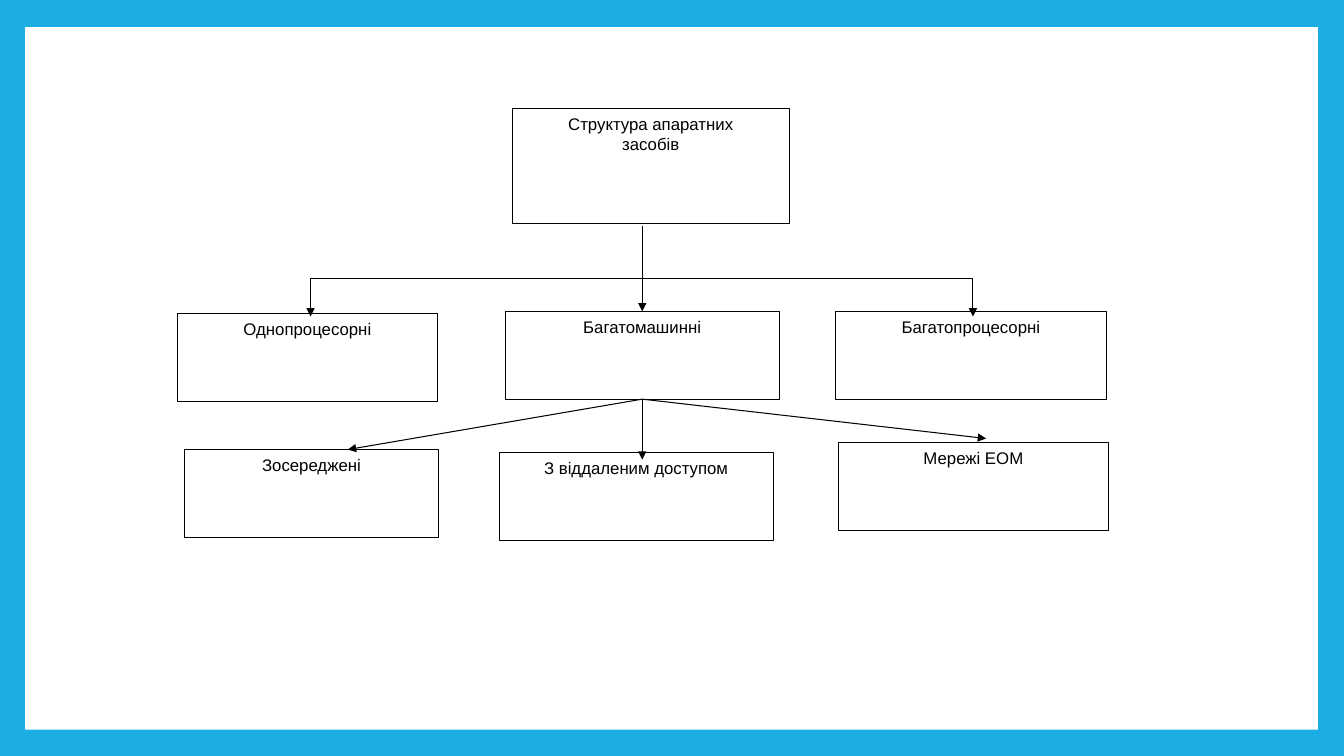
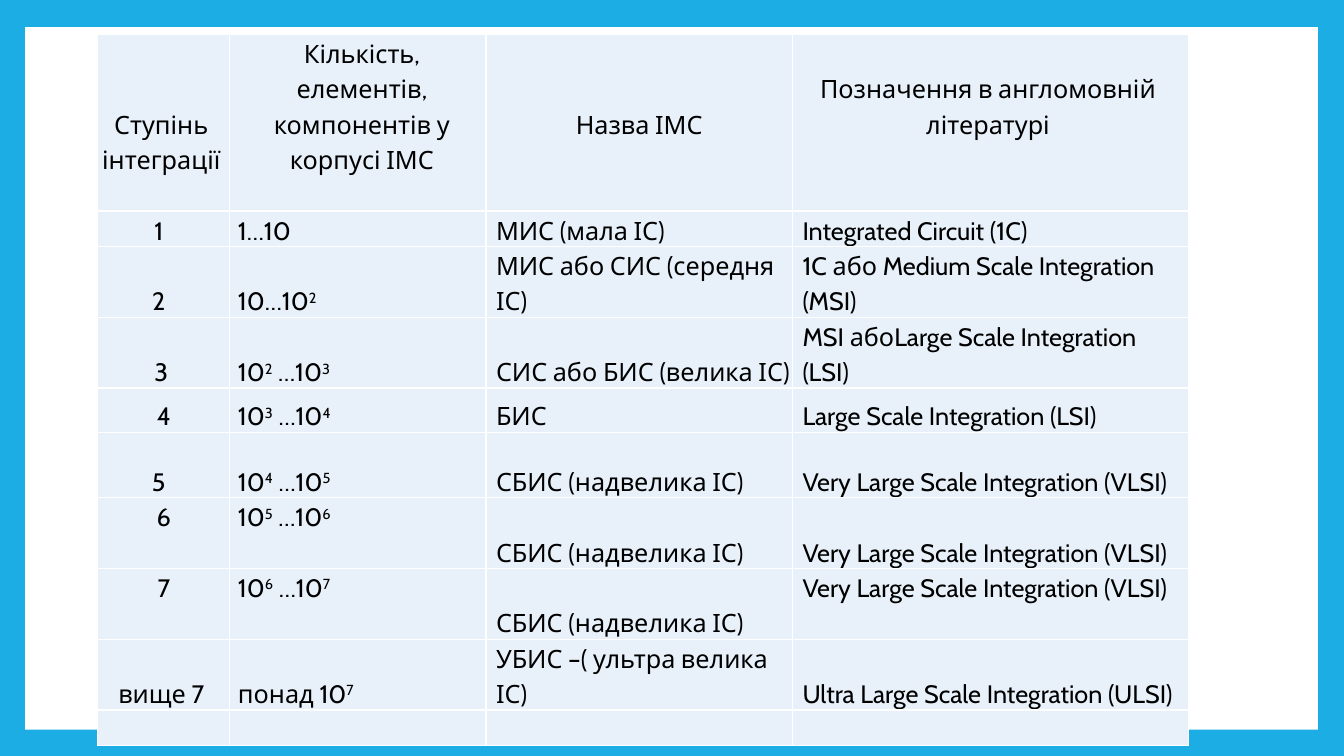
from lxml.etree import SubElement
from pptx import Presentation
from pptx.dml.color import RGBColor
from pptx.enum.shapes import MSO_CONNECTOR, MSO_SHAPE
from pptx.enum.text import MSO_ANCHOR, PP_ALIGN
from pptx.oxml.ns import qn
from pptx.util import Inches, Pt

FRAME_BLUE = RGBColor(0x1C, 0xAD, 0xE4)
CELL_BLUE = RGBColor(0xE8, 0xF1, 0xFA)
WHITE = RGBColor(0xFF, 0xFF, 0xFF)
BLACK = RGBColor(0, 0, 0)
DIAGRAM_FONT = "Arial"
TABLE_FONT = "Cabin"
TOP, BOTTOM = 0, 2

DIAGRAM_BOXES = {
    "root": ("Структура апаратних\nзасобів", 3.32, 0, 2.75, 1.14),
    "multi_machine": ("Багатомашинні", 3.25, 2.01, 2.72, 0.87),
    "single_processor": ("Однопроцесорні", 0, 2.03, 2.58, 0.87),
    "multi_processor": ("Багатопроцесорні", 6.53, 2.01, 2.68, 0.87),
    "concentrated": ("Зосереджені", 0.07, 3.38, 2.52, 0.87),
    "remote_access": ("З віддаленим доступом", 3.19, 3.41, 2.72, 0.87),
    "networks": ("Мережі ЕОМ", 6.56, 3.31, 2.67, 0.87),
}
BRANCH_HEIGHT = 1.68
BRANCH_ENDS = [1.32, 7.89]
BRANCH_DROP = 0.38

COLUMN_WIDTHS = [1.31, 2.54, 3.04, 3.93]
COLUMN_INDENTS = [0, 0.08, 0.1, 0.1]
ROW_HEIGHTS = [1.73, 0.35, 0.7, 0.7, 0.44, 0.65, 0.7, 0.7, 0.7, 0.35]
LINE_HEIGHT = 0.35
LEVEL_RIGHT_MARGINS = [0.05, 0.1, 0.1, 0.05, 0, 0.1, 0, 0, 0.05, 0]
TABLE_ROWS = [
    ["Ступінь інтеграції", "Кількість, елементів, компонентів у корпусі ІМС",
     "Назва ІМС", "Позначення в англомовній літературі"],
    ["1", "1…10", "МИС (мала ІС)", "Integrated Circuit (1C)"],
    ["2", "10…10^2", "МИС або СИС (середня ІС)",
     "1C або Medium Scale Integration (MSI)"],
    ["3", "10^2 …10^3", "СИС або БИС (велика ІС)",
     "MSI абоLarge Scale Integration (LSI)"],
    ["4", "10^3 …10^4", "БИС", "Large Scale Integration (LSI)"],
    ["5", "10^4 …10^5", "СБИС (надвелика ІС)",
     "Very Large Scale Integration (VLSI)"],
    ["6", "10^5 …10^6", "СБИС (надвелика ІС)",
     "Very Large Scale Integration (VLSI)"],
    ["7", "10^6 …10^7", "СБИС (надвелика ІС)",
     "Very Large Scale Integration (VLSI)"],
    ["вище 7", "понад 10^7", "УБИС –( ультра велика ІС)",
     "Ultra Large Scale Integration (ULSI)"],
    ["", "", "", ""],
]
LINES_BELOW = {
    (0, 0): 1, (0, 1): 1, (0, 2): 2, (0, 3): 2,
    (6, 0): 1, (6, 1): 1, (7, 0): 1, (7, 1): 1, (7, 3): 1,
}


def style_font(paragraph, name, size):
    """Give a paragraph its typeface, size and black colour."""
    paragraph.font.name = name
    paragraph.font.size = Pt(size)
    paragraph.font.color.rgb = BLACK


def add_frame(presentation, slide):
    """Give the slide master the blue background and the white panel."""
    master = presentation.slide_master
    master.background.fill.solid()
    master.background.fill.fore_color.rgb = FRAME_BLUE
    panel = slide.shapes.add_shape(
        MSO_SHAPE.RECTANGLE, Inches(0.25), Inches(0.27), Inches(12.82), Inches(6.97))
    panel.shadow.inherit = False
    panel.fill.solid()
    panel.fill.fore_color.rgb = WHITE
    panel.line.fill.background()
    next_id = max(shape.shape_id for shape in master.shapes) + 1
    panel.element.nvSpPr.cNvPr.set("id", str(next_id))
    master.element.cSld.spTree.insert(2, panel.element)


def add_box(slide, text, left, top, width, height):
    """Add an outlined process box with centred text at its top."""
    box = slide.shapes.add_shape(
        MSO_SHAPE.FLOWCHART_PROCESS, left, top, width, height)
    box.shadow.inherit = False
    box.fill.solid()
    box.fill.fore_color.rgb = WHITE
    box.line.color.rgb = BLACK
    box.line.width = Pt(0.75)
    frame = box.text_frame
    frame.word_wrap = True
    frame.vertical_anchor = MSO_ANCHOR.TOP
    frame.text = text
    for paragraph in frame.paragraphs:
        paragraph.alignment = PP_ALIGN.CENTER
        style_font(paragraph, DIAGRAM_FONT, 12)
    return box


def add_line(slide, start, end, arrow=True):
    """Add a thin black straight connector, with an arrowhead if wanted."""
    connector = slide.shapes.add_connector(MSO_CONNECTOR.STRAIGHT, *start, *end)
    connector.line.color.rgb = BLACK
    connector.line.width = Pt(0.75)
    if arrow:
        SubElement(connector.line._get_or_add_ln(), qn("a:tailEnd"), type="triangle")
    SubElement(connector.element.spPr, qn("a:effectLst"))
    return connector


def add_hierarchy(slide, left, top):
    """Draw the hardware structure diagram from its upper left corner."""
    boxes = {}
    for name, (text, x, y, width, height) in DIAGRAM_BOXES.items():
        boxes[name] = add_box(slide, text, left + Inches(x), top + Inches(y),
                              Inches(width), Inches(height))

    hub = boxes["multi_machine"]
    trunk = hub.left + hub.width // 2
    branch = top + Inches(BRANCH_HEIGHT)
    branch_ends = [left + Inches(x) for x in BRANCH_ENDS]
    add_line(slide, (branch_ends[0], branch), (branch_ends[1], branch), arrow=False)
    for x in branch_ends:
        add_line(slide, (x, branch), (x, branch + Inches(BRANCH_DROP)))
    stem = add_line(slide, (trunk, top + Inches(1.16)), (trunk, hub.top))
    stem.end_connect(hub, TOP)

    ends = [
        (left + Inches(1.69), boxes["concentrated"].top),
        (trunk, boxes["remote_access"].top + Inches(0.07)),
        (left + Inches(8.02), boxes["networks"].top - Inches(0.04)),
    ]
    for end in ends:
        connector = add_line(slide, (trunk, hub.top + hub.height), end)
        connector.begin_connect(hub, BOTTOM)


def add_powers(paragraph, text):
    """Write text whose digits after a caret are raised."""
    first, *rest = text.split("^")
    paragraph.add_run().text = first
    for piece in rest:
        exponent = paragraph.add_run()
        exponent.text = piece[0]
        exponent.font._element.set("baseline", "30000")
        if piece[1:]:
            paragraph.add_run().text = piece[1:]


def add_borders(cell):
    """Draw white one-point borders round a cell."""
    properties = cell._tc.get_or_add_tcPr()
    for side in ("lnL", "lnR", "lnT", "lnB"):
        line = SubElement(properties, qn(f"a:{side}"), w=str(Pt(1)))
        fill = SubElement(line, qn("a:solidFill"))
        SubElement(fill, qn("a:srgbClr"), val=str(WHITE))


def fill_cell(cell, text, row, column):
    """Format one table cell and write its text."""
    centred = row == 0 or column == 0
    indented = row > 0 or column == 1
    right_margins = [LEVEL_RIGHT_MARGINS[row], 0, 0, 0.05]
    cell.margin_left = Inches(COLUMN_INDENTS[column] if indented else 0)
    cell.margin_right = Inches(right_margins[column])
    cell.margin_top = 0
    cell.margin_bottom = Inches(LINE_HEIGHT * LINES_BELOW.get((row, column), 0))
    cell.vertical_anchor = MSO_ANCHOR.BOTTOM
    add_borders(cell)
    cell.fill.solid()
    cell.fill.fore_color.rgb = CELL_BLUE
    if text:
        paragraph = cell.text_frame.paragraphs[0]
        paragraph.alignment = PP_ALIGN.CENTER if centred else PP_ALIGN.LEFT
        paragraph.line_spacing = 1.15
        style_font(paragraph, TABLE_FONT, 18)
        add_powers(paragraph, text)


def add_integration_table(slide, left, top):
    """Add the table of integration levels from its upper left corner."""
    table = slide.shapes.add_table(
        len(ROW_HEIGHTS), len(COLUMN_WIDTHS), left, top,
        Inches(sum(COLUMN_WIDTHS)), Inches(sum(ROW_HEIGHTS))).table
    table.first_row = False
    table.horz_banding = False
    for column, width in zip(table.columns, COLUMN_WIDTHS):
        column.width = Inches(width)
    for row, height in zip(table.rows, ROW_HEIGHTS):
        row.height = Inches(height)
    for row, texts in enumerate(TABLE_ROWS):
        for column, text in enumerate(texts):
            fill_cell(table.cell(row, column), text, row, column)


def main():
    """Build and save the presentation."""
    presentation = Presentation()
    presentation.slide_width = Inches(13.33)
    presentation.slide_height = Inches(7.5)
    blank = presentation.slide_layouts[6]
    structure_slide = presentation.slides.add_slide(blank)
    add_frame(presentation, structure_slide)
    add_hierarchy(structure_slide, Inches(1.76), Inches(1.08))
    table_slide = presentation.slides.add_slide(blank)
    add_integration_table(table_slide, Inches(0.97), Inches(0.34))
    presentation.save("out.pptx")


if __name__ == "__main__":
    main()
